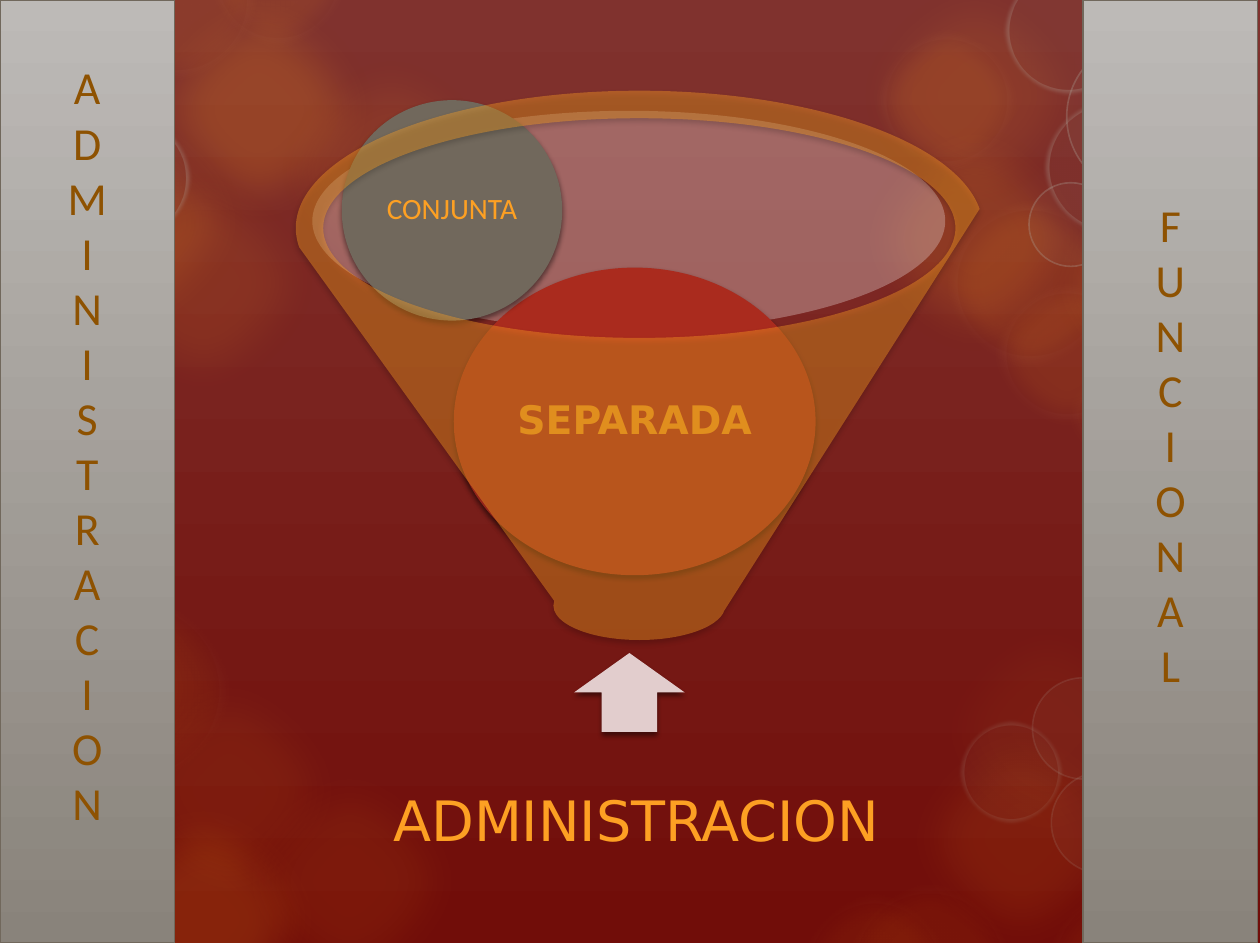
from pptx import Presentation
from pptx.dml.color import RGBColor
from pptx.enum.shapes import MSO_SHAPE
from pptx.enum.text import MSO_ANCHOR, MSO_AUTO_SIZE, PP_ALIGN
from pptx.oxml.ns import qn
from pptx.util import Inches, Pt
from lxml.etree import SubElement

THEME = {
    "background": ("80322E", "710D09"), "panel": ("BDBAB7", "89837B"),
    "amber": "FC9E1E", "cream": "FEDDAF", "stone": "ADA59A",
    "slate": "71685C", "letter": "8E5201", "label": "FDA023",
    "rose": "D8BEBD", "arrow": "E2CDCD", "red": "AA2B1E",
    "body": "Calibri", "display": "DejaVu Sans",
    "letter_size": 28, "conclusion_size": 34, "main_size": 24, "small_size": 18,
}
WIDTH, HEIGHT, PANEL_WIDTH = 10.69, 8, 1.48
LEFT_WORD, RIGHT_WORD = "ADMINISTRACION", "FUNCIONAL"

GLOW_SIZE = 2.23
GLOWS = [
    (-0.27, 4.72, 8), (0.61, 1.28, 10), (2.2, 0.33, 10), (0.61, 6.68, 16),
    (1.08, -0.19, 20), (0, 0.77, 15), (7.15, -0.31, 10), (8.76, 1.28, 15),
    (7.78, 5.09, 5), (0.83, 5.59, 8), (7.15, 0.91, 15), (7.55, 6, 10),
    (1.85, 6.36, 8),
]
HALOS = [
    (7.42, 0.24, 1.22, 10, 6), (8.03, 1.69, 1.42, 10, 6), (8.44, 2.39, 1.22, 10, 6),
    (9.06, 3.1, 0.84, 10, 6), (0.8, -0.7, 1.39, 10, 6), (1.76, -0.78, 1.2, 10, 6),
    (0.32, 5.04, 1.63, 6, 4), (6.77, 7.57, 1.3, 6, 4), (7.16, 7.48, 1.45, 6, 4),
    (8.86, 7.48, 1.42, 6, 4),
]
RINGS = [
    (0.55, 0.98, 1.06, 5, 30), (8.53, -0.27, 1.06, 5, 30), (9.05, 0.33, 1.32, 1, 30),
    (8.87, 0.85, 1.13, 5, 30), (8.73, 1.55, 0.71, 1, 30), (8.92, 6.55, 0.86, 1, 15),
    (8.15, 6.12, 0.86, 5, 15), (8.76, 5.75, 0.86, 1, 15),
]
FUNNEL_PARTS = [
    (MSO_SHAPE.OVAL, (2.65, 0.94, 5.37, 1.87), "rose", 40, False, None),
    (MSO_SHAPE.UP_ARROW, (4.87, 5.54, 0.94, 0.67), "arrow", 100, True, None),
    (MSO_SHAPE.OVAL, (3.85, 2.27, 3.07, 2.61), "red", 100, True,
     ("SEPARADA", "display", "main_size", True)),
    (MSO_SHAPE.OVAL, (2.9, 0.85, 1.87, 1.87), "slate", 100, True,
     ("CONJUNTA", "body", "small_size", False)),
    (MSO_SHAPE.FUNNEL, (2.51, 0.77, 5.83, 4.66), "label", 40, True, None),
]
CONCLUSION = ("ADMINISTRACION", "display", "conclusion_size", False)


def color(name):
    return RGBColor.from_string(THEME[name])


def set_alpha(fill_format, name, percent):
    fill_format.solid()
    fill_format.fore_color.rgb = color(name)
    if percent < 100:
        node = fill_format._xPr.find(qn("a:solidFill"))[0]
        SubElement(node, qn("a:alpha"), val=str(percent * 1000))


def set_gradient(fill_format, name):
    fill_format.gradient()
    fill_format.gradient_angle = 270
    for stop, value, position in zip(fill_format.gradient_stops, THEME[name], (0, 1)):
        stop.color.rgb = RGBColor.from_string(value)
        stop.position = position


def add_effect(shape, tag, **attributes):
    effects = shape._element.spPr.find(qn("a:effectLst"))
    return SubElement(effects, qn(tag), **attributes)


def add_plain(slide, kind, box, fill, alpha):
    shape = slide.shapes.add_shape(kind, *map(Inches, box))
    set_alpha(shape.fill, fill, alpha)
    shape.line.fill.background()
    shape.shadow.inherit = False
    return shape


def add_circle(slide, left, top, size, fill, alpha, soft, line=None):
    shape = add_plain(slide, MSO_SHAPE.OVAL, (left, top, size, size), fill, alpha)
    if line:
        name, width, line_alpha = line
        set_alpha(shape.line.fill, name, line_alpha)
        shape.line.width = Pt(width)
    if soft:
        add_effect(shape, "a:softEdge", rad=str(Inches(soft)))


def add_shadow(shape):
    shadow = add_effect(shape, "a:outerShdw", blurRad=str(Pt(3)), dist=str(Pt(2)),
                        dir="5400000", rotWithShape="0")
    black = SubElement(shadow, qn("a:srgbClr"), val="000000")
    SubElement(black, qn("a:alpha"), val="45000")


def set_frame(frame, left, top, right, bottom):
    frame.word_wrap = True
    frame.auto_size = MSO_AUTO_SIZE.NONE
    frame.vertical_anchor = MSO_ANCHOR.MIDDLE
    frame.margin_left, frame.margin_top = Inches(left), Inches(top)
    frame.margin_right, frame.margin_bottom = Inches(right), Inches(bottom)


def add_run(paragraph, text, font, size, name, bold=False):
    paragraph.alignment = PP_ALIGN.CENTER
    run = paragraph.add_run()
    run.text = text
    run.font.name = THEME[font]
    run.font.size = Pt(THEME[size])
    run.font.bold = bold
    run.font.color.rgb = color(name)


def add_label(shape, label, margin):
    text, font, size, bold = label
    set_frame(shape.text_frame, *[margin] * 4)
    paragraph = shape.text_frame.paragraphs[0]
    paragraph.line_spacing = 0.9
    add_run(paragraph, text, font, size, "label", bold)


def format_panel(shape, left):
    shape.left, shape.top = Inches(left), Inches(0)
    shape.width, shape.height = Inches(PANEL_WIDTH), Inches(HEIGHT)
    set_gradient(shape.fill, "panel")
    shape.line.color.rgb = color("slate")
    shape.line.width = Pt(1)
    shape.shadow.inherit = False
    set_frame(shape.text_frame, 0.11, 0.05, 0.11, 0.51)


def add_backdrop(slide):
    set_gradient(slide.background.fill, "background")
    for left, top, alpha in GLOWS:
        add_circle(slide, left, top, GLOW_SIZE, "amber", alpha, 0.35)
    for left, top, size, alpha, line_alpha in HALOS:
        add_circle(slide, left, top, size, "amber", alpha, 0.18, ("cream", 14, line_alpha))
    for left, top, size, width, line_alpha in RINGS:
        soft = 0.04 if width > 1 else None
        add_circle(slide, left, top, size, "stone", 5, soft, ("stone", width, line_alpha))


def add_title_panel(slide):
    title = slide.shapes.title
    format_panel(title, 0)
    slide.shapes._spTree.append(title._element)
    paragraph = title.text_frame.paragraphs[0]
    for index, letter in enumerate(LEFT_WORD):
        if index:
            paragraph.add_line_break()
        add_run(paragraph, letter, "body", "letter_size", "letter")


def add_funnel(slide):
    for kind, box, fill, alpha, shadow, label in FUNNEL_PARTS:
        shape = add_plain(slide, kind, box, fill, alpha)
        if shadow:
            add_shadow(shape)
        if label:
            add_label(shape, label, 0.03)
    conclusion = slide.shapes.add_textbox(*map(Inches, (2.9, 6.36, 5, 1.25)))
    add_label(conclusion, CONCLUSION, 0.26)


def add_right_panel(slide):
    panel = slide.shapes.add_shape(MSO_SHAPE.RECTANGLE, 0, 0, Inches(1), Inches(1))
    format_panel(panel, 9.19)
    frame = panel.text_frame
    for index, letter in enumerate(RIGHT_WORD):
        paragraph = frame.add_paragraph() if index else frame.paragraphs[0]
        add_run(paragraph, letter, "body", "letter_size", "letter")


def main():
    presentation = Presentation()
    presentation.slide_width, presentation.slide_height = Inches(WIDTH), Inches(HEIGHT)
    slide = presentation.slides.add_slide(presentation.slide_layouts[5])
    add_backdrop(slide)
    add_title_panel(slide)
    add_funnel(slide)
    add_right_panel(slide)
    presentation.save("out.pptx")


if __name__ == "__main__":
    main()
